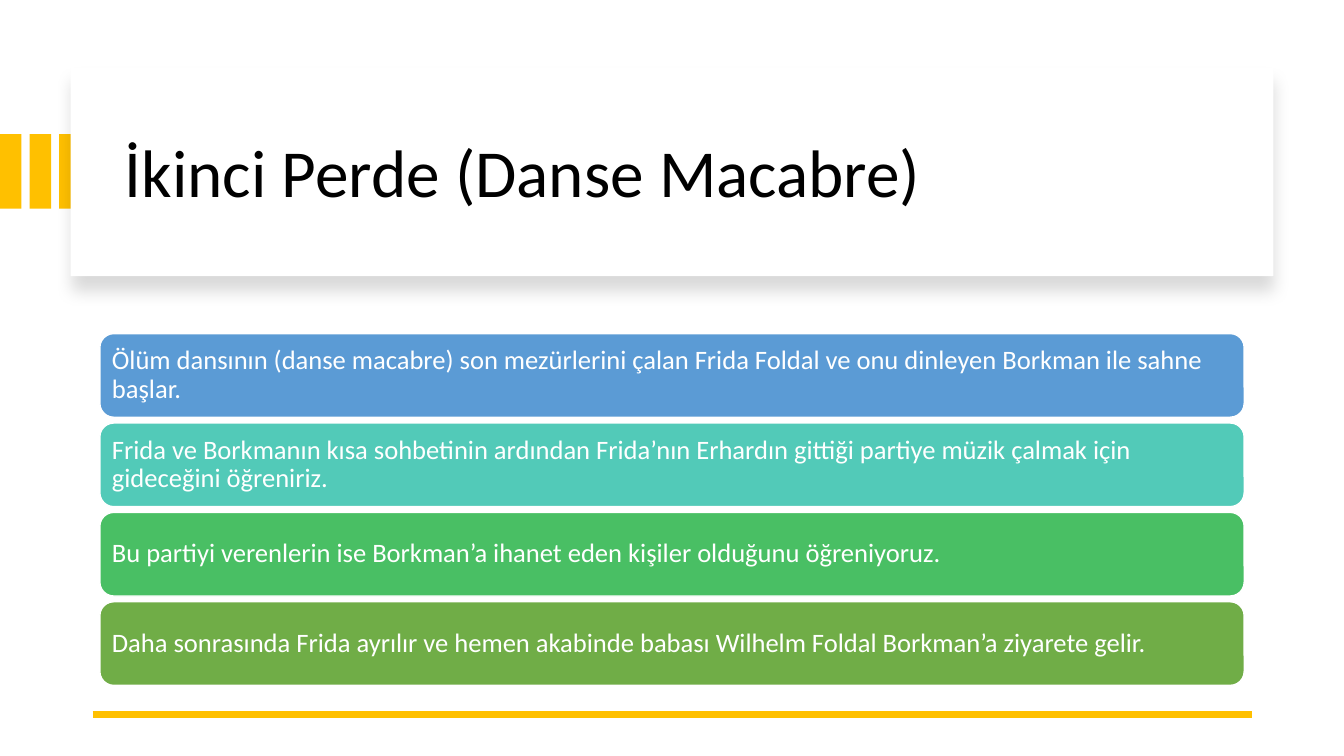
from dataclasses import dataclass

from lxml import etree
from pptx import Presentation
from pptx.dml.color import RGBColor
from pptx.enum.shapes import MSO_CONNECTOR, MSO_SHAPE
from pptx.enum.text import MSO_ANCHOR, PP_ALIGN
from pptx.oxml import parse_xml
from pptx.oxml.ns import nsdecls, qn
from pptx.util import Pt

RECTANGLE = MSO_SHAPE.RECTANGLE
ROUNDED = MSO_SHAPE.ROUNDED_RECTANGLE
STRAIGHT = MSO_CONNECTOR.STRAIGHT
MIDDLE = MSO_ANCHOR.MIDDLE
LEFT = PP_ALIGN.LEFT
EMU_PER_PX = 9144


@dataclass(frozen=True)
class Theme:
    """Colours, font and type sizes of the slide."""
    font: str = "Calibri"
    title_size: int = 48
    body_size: int = 19
    line_spacing: float = 0.9
    accent: str = "FFC000"
    paper: str = "FFFFFF"
    ink: str = "000000"
    bars: tuple = ("5B9BD5", "52CAB8", "49BF64", "70AD47")


THEME = Theme()
TITLE = "İkinci Perde (Danse Macabre)"
EVENTS = (
    "Ölüm dansının (danse macabre) son mezürlerini çalan Frida Foldal ve onu dinleyen Borkman ile sahne başlar.",
    "Frida ve Borkmanın kısa sohbetinin ardından Frida’nın Erhardın gittiği partiye müzik çalmak için gideceğini öğreniriz.",
    "Bu partiyi verenlerin ise Borkman’a ihanet eden kişiler olduğunu öğreniyoruz.",
    "Daha sonrasında Frida ayrılır ve hemen akabinde babası Wilhelm Foldal Borkman’a ziyarete gelir.",
)


def px(length):
    """Turn px into whole EMU."""
    return round(length * EMU_PER_PX)


def add_block(slide, kind, box, fill):
    """Add a filled preset shape without line or shadow."""
    shape = slide.shapes.add_shape(kind, *map(px, box))
    shape.shadow.inherit = False
    shape.fill.solid()
    shape.fill.fore_color.rgb = RGBColor.from_string(fill)
    shape.line.fill.background()
    return shape


def write(shape, text, size, color):
    """Put left-aligned, vertically centred text into a shape."""
    frame = shape.text_frame
    frame.word_wrap = True
    frame.vertical_anchor = MIDDLE
    frame.text = text
    paragraph = frame.paragraphs[0]
    paragraph.alignment = LEFT
    paragraph.line_spacing = THEME.line_spacing
    font = paragraph.runs[0].font
    font.name = THEME.font
    font.size = Pt(size)
    font.color.rgb = RGBColor.from_string(color)


def add_soft_shadow(shape):
    """Give a shape a faint shadow that falls straight down."""
    effects = shape.element.spPr.find(qn("a:effectLst"))
    effects.append(parse_xml(
        f'<a:outerShdw {nsdecls("a")} blurRad="{Pt(11)}" dist="{Pt(10)}" dir="5400000" '
        f'algn="t" rotWithShape="0"><a:srgbClr val="{THEME.ink}">'
        '<a:alpha val="15000"/></a:srgbClr></a:outerShdw>'))


def add_stripes(slide, box, count=3, gap=8):
    """Fill the box with equal upright stripes."""
    left, top, width, height = box
    stripe = (width - gap * (count - 1)) / count
    for index in range(count):
        add_block(slide, RECTANGLE, (left + index * (stripe + gap), top, stripe, height), THEME.accent)


def add_title_card(slide, box):
    """Place the white card and the title inside it."""
    left, top, width, height = box
    add_soft_shadow(add_block(slide, RECTANGLE, box, THEME.paper))
    title = slide.shapes.add_textbox(*map(px, (left + 44, top + 22, width - 80, height - 37)))
    write(title, TITLE, THEME.title_size, THEME.ink)


def add_event_bars(slide, box, bar_height=83, inset=8):
    """Spread one coloured bar per event evenly down the box."""
    left, top, width, height = box
    pitch = (height - bar_height) / (len(EVENTS) - 1)
    for index, (event, color) in enumerate(zip(EVENTS, THEME.bars)):
        bar = add_block(slide, ROUNDED, (left, top + index * pitch, width, bar_height), color)
        bar.line.color.rgb = RGBColor.from_string(THEME.paper)
        bar.line.width = Pt(1)
        frame = bar.text_frame
        frame.margin_left = frame.margin_right = px(inset)
        frame.margin_top = frame.margin_bottom = px(inset)
        write(bar, event, THEME.body_size, THEME.paper)


def add_footer_rule(slide, left, top, width):
    """Draw the thick rule at the foot of the slide."""
    rule = slide.shapes.add_connector(STRAIGHT, px(left), px(top), px(left + width), px(top))
    rule.line.color.rgb = RGBColor.from_string(THEME.accent)
    rule.line.width = Pt(4.5)
    etree.SubElement(rule.element.spPr, qn("a:effectLst"))


def main():
    """Build and save the slide."""
    presentation = Presentation()
    presentation.slide_width = px(1333)
    presentation.slide_height = px(750)
    slide = presentation.slides.add_slide(presentation.slide_layouts[6])
    add_stripes(slide, (0, 133, 80, 74))
    add_title_card(slide, (70, 67, 1193, 207))
    add_footer_rule(slide, 92, 709, 1150)
    add_event_bars(slide, (99, 331, 1135, 349))
    presentation.save("out.pptx")


if __name__ == "__main__":
    main()
